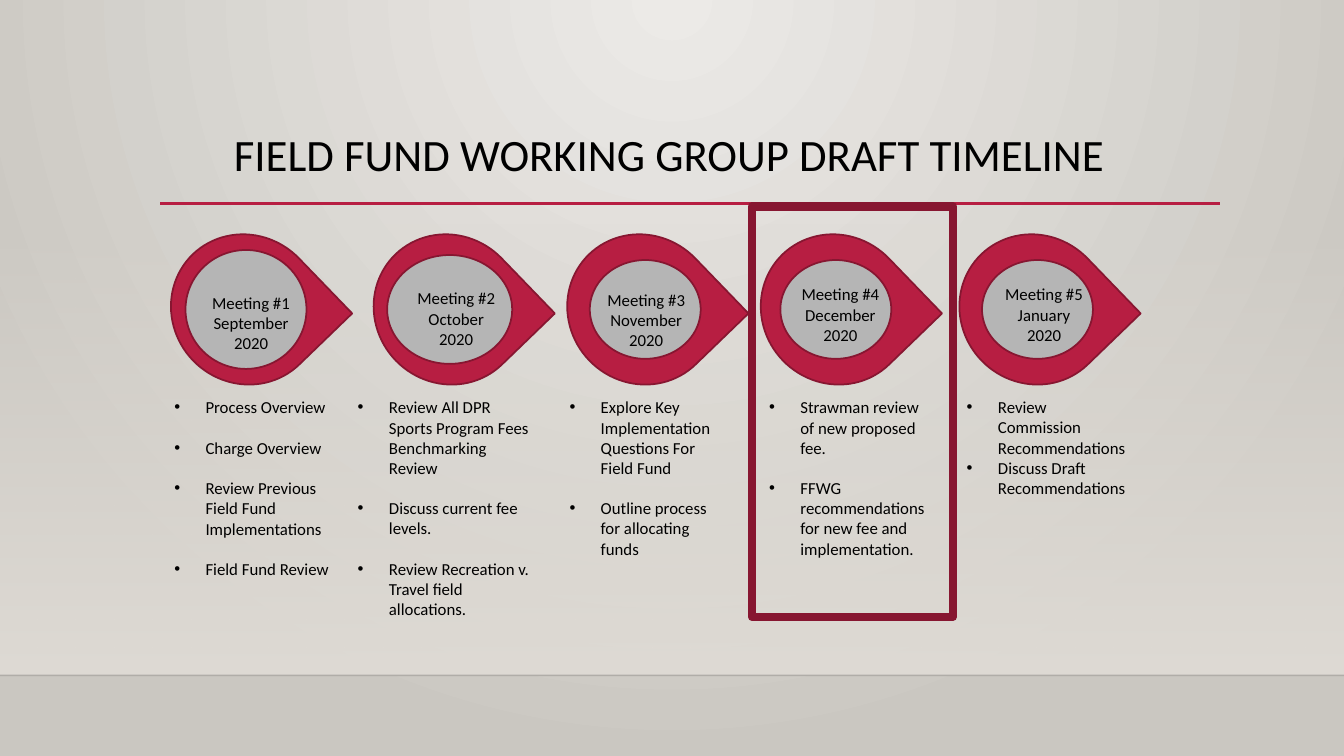
from dataclasses import dataclass

from lxml import etree
from pptx import Presentation
from pptx.dml.color import RGBColor
from pptx.enum.shapes import MSO_CONNECTOR, MSO_SHAPE
from pptx.enum.text import MSO_ANCHOR, PP_ALIGN
from pptx.oxml import parse_xml
from pptx.oxml.ns import nsdecls, qn
from pptx.util import Inches, Pt

RECT, TEARDROP, OVAL = MSO_SHAPE.RECTANGLE, MSO_SHAPE.TEAR, MSO_SHAPE.OVAL
STRAIGHT = MSO_CONNECTOR.STRAIGHT
CENTER, LEFT, TOP = PP_ALIGN.CENTER, PP_ALIGN.LEFT, MSO_ANCHOR.TOP


@dataclass(frozen=True)
class Theme:
    font: str = "Calibri"
    title_size: float = 32
    text_size: float = 12
    item_gap: float = 14.5
    ink: str = "000000"
    crimson: str = "B71E42"
    maroon: str = "871631"
    disc: str = "B5B5B5"
    light: str = "ECEAE7"
    dark: str = "CAC7C1"
    band: str = "DFDBD5"


THEME = Theme()
DROP_TOP, DROP_SIZE, DROP_TURN = 2.34, (1.52, 1.46), 46
LIST_TOP, INDENT = 3.89, 0.31


@dataclass(frozen=True)
class Meeting:
    """Boxes are (left, top, width, height); list_box is (left, width, height)."""
    name: str
    drop_left: float
    disc_box: tuple
    label_box: tuple
    list_box: tuple
    items: tuple
    gap: float = THEME.item_gap


MEETINGS = (
    Meeting("Meeting #1 September 2020", 1.68, (1.84, 2.48, 1.2, 1.18),
            (1.98, 2.85, 1.02, 0.71), (1.63, 1.92, 1.92),
            ("Process Overview", "Charge Overview",
             "Review Previous Field Fund Implementations", "Field Fund Review")),
    Meeting("Meeting #2 October 2020", 3.69, (3.84, 2.53, 1.24, 1.08),
            (3.99, 2.81, 1.07, 0.71), (3.45, 1.96, 2.32),
            ("Review All DPR Sports Program Fees Benchmarking Review",
             "Discuss current fee levels.",
             "Review Recreation v. Travel field allocations.")),
    Meeting("Meeting #3 November 2020", 5.61, (5.85, 2.58, 1.1, 0.98),
            (5.83, 2.82, 1.16, 0.71), (5.55, 1.71, 1.72),
            ("Explore Key Implementation Questions For Field Fund",
             "Outline process for allocating funds")),
    Meeting("Meeting #4 December 2020", 7.53, (7.74, 2.58, 1.1, 0.98),
            (7.79, 2.77, 1.09, 0.71), (7.53, 1.82, 2.09),
            ("Strawman review of new proposed fee.",
             "FFWG recommendations for new fee and implementation.")),
    Meeting("Meeting #5 January 2020", 9.5, (9.74, 2.58, 1.1, 0.98),
            (9.85, 2.77, 1.01, 0.71), (9.49, 1.83, 1.3),
            ("Review Commission Recommendations",
             "Discuss Draft Recommendations"), 0),
)


def inches(values):
    return [Inches(v) for v in values]


def set_attrs(obj, values):
    for name, value in values.items():
        setattr(obj, name, value)


def format_font(font, size):
    set_attrs(font, {"name": THEME.font, "size": Pt(size)})
    font.color.rgb = RGBColor.from_string(THEME.ink)


def gradient(start, end, direction, start_alpha=100):
    """Return a two-stop gradFill; direction is its a:lin or a:path element."""
    return parse_xml(
        f'<a:gradFill {nsdecls("a")} rotWithShape="1"><a:gsLst>'
        f'<a:gs pos="0"><a:srgbClr val="{start}">'
        f'<a:alpha val="{start_alpha * 1000}"/></a:srgbClr></a:gs>'
        f'<a:gs pos="100000"><a:srgbClr val="{end}"/></a:gs>'
        f'</a:gsLst>{direction}</a:gradFill>')


def replace_solid(parent, fill):
    parent.replace(parent.find(qn("a:solidFill")), fill)


def add_background(s):
    s.background.fill.solid()
    glow = ('<a:path path="circle"><a:fillToRect l="43000" t="0" r="43000" '
            'b="100000"/></a:path>')
    replace_solid(s.element.find(".//" + qn("p:bgPr")),
                  gradient(THEME.light, THEME.dark, glow))
    band = add_shape(s, RECT, (0, 2.21, 13.33, 4.49), THEME.band)
    replace_solid(band.element.spPr,
                  gradient(THEME.band, THEME.band, '<a:lin ang="5400000"/>', 0))


def add_shape(s, kind, box, fill=None, line=None, width=1.25):
    shape = s.shapes.add_shape(kind, *inches(box))
    shape.shadow.inherit = False
    for fmt, color in ((shape.fill, fill), (shape.line.fill, line)):
        if color:
            fmt.solid()
            fmt.fore_color.rgb = RGBColor.from_string(color)
        else:
            fmt.background()
    if line:
        shape.line.width = Pt(width)
    return shape


def add_rule(s, left, right, y, color, width, alpha=100):
    rule = s.shapes.add_connector(STRAIGHT, *inches((left, y, right, y)))
    rule.line.color.rgb = RGBColor.from_string(color)
    rule.line.width = Pt(width)
    spPr = rule.element.spPr
    etree.SubElement(spPr.find(".//" + qn("a:srgbClr")), qn("a:alpha"),
                     val=str(alpha * 1000))
    etree.SubElement(spPr, qn("a:effectLst"))


def add_title(s, text):
    title = s.shapes.title
    set_attrs(title, dict(zip(("left", "top", "width", "height"),
                              inches((1.39, 1.27, 10.5, 1.15)))))
    tf = title.text_frame
    set_attrs(tf, {"text": text, "word_wrap": True, "vertical_anchor": TOP})
    p = tf.paragraphs[0]
    set_attrs(p, {"alignment": CENTER, "line_spacing": 0.9})
    format_font(p.runs[0].font, THEME.title_size)


def add_bullet(p):
    pPr = p._p.get_or_add_pPr()
    pPr.set("marL", str(Inches(INDENT)))
    pPr.set("indent", str(-Inches(INDENT)))
    etree.SubElement(pPr, qn("a:buFont"), typeface="Arial")
    etree.SubElement(pPr, qn("a:buChar"), char="•")


def add_text(s, box, texts, align=LEFT, bullets=False, gap=0):
    tf = s.shapes.add_textbox(*inches(box)).text_frame
    tf.word_wrap = True
    for i, text in enumerate(texts):
        p = tf.add_paragraph() if i else tf.paragraphs[0]
        p.alignment = align
        if i and gap:
            p.space_before = Pt(gap)
        if bullets:
            add_bullet(p)
        r = p.add_run()
        r.text = text
        format_font(r.font, THEME.text_size)


def add_meeting(s, m):
    drop = add_shape(s, TEARDROP, (m.drop_left, DROP_TOP, *DROP_SIZE),
                     THEME.crimson, THEME.maroon)
    drop.rotation = DROP_TURN
    add_shape(s, OVAL, m.disc_box, THEME.disc, THEME.maroon)
    add_text(s, m.label_box, [m.name], CENTER)
    left, width, height = m.list_box
    add_text(s, (left, LIST_TOP, width, height), m.items,
             bullets=True, gap=m.gap)


def main():
    prs = Presentation()
    prs.slide_width, prs.slide_height = inches((13.33, 7.5))
    s = prs.slides.add_slide(prs.slide_layouts[5])
    add_background(s)
    add_rule(s, 0, 13.33, 6.7, THEME.ink, 1, alpha=20)
    add_rule(s, 1.59, 12.1, 2.02, THEME.crimson, 2.5)
    add_title(s, "FIELD FUND WORKING GROUP DRAFT TIMELINE")
    for meeting in MEETINGS:
        add_meeting(s, meeting)
    add_shape(s, RECT, (7.46, 2.05, 1.99, 4.07), line=THEME.maroon, width=6)
    prs.save("out.pptx")


if __name__ == "__main__":
    main()
